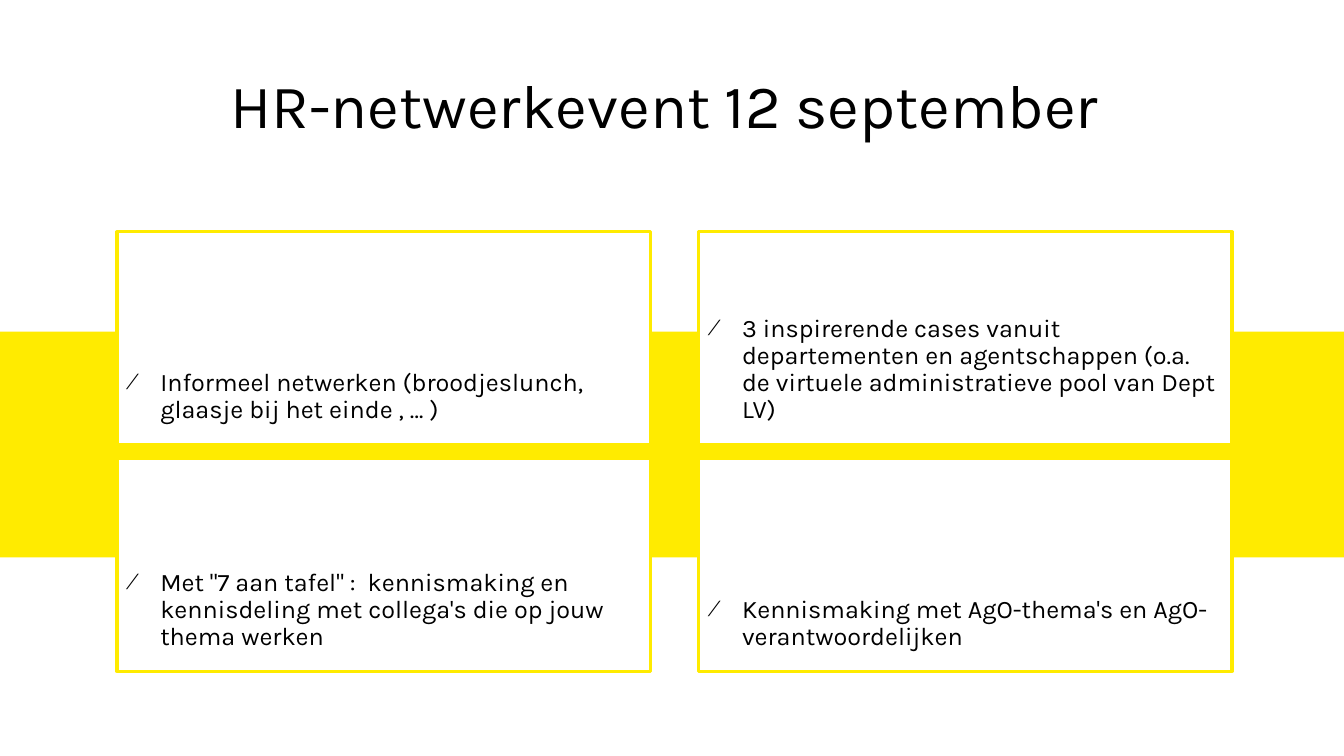
from lxml import etree
from pptx import Presentation
from pptx.dml.color import RGBColor
from pptx.enum.shapes import MSO_SHAPE
from pptx.enum.text import MSO_ANCHOR, MSO_AUTO_SIZE, PP_ALIGN
from pptx.oxml.ns import qn
from pptx.util import Inches, Pt

RECTANGLE = MSO_SHAPE.RECTANGLE
MIDDLE, BOTTOM = MSO_ANCHOR.MIDDLE, MSO_ANCHOR.BOTTOM
LEFT, CENTER = PP_ALIGN.LEFT, PP_ALIGN.CENTER
NO_AUTOFIT = MSO_AUTO_SIZE.NONE

COLORS = {"yellow": "FFEB00", "white": "FFFFFF", "black": "000000"}
FONT = "Karla"
COMPARISON_LAYOUT = 4

TITLE = "HR-netwerkevent 12 september "
TOPICS = [
    "Informeel netwerken (broodjeslunch, glaasje bij het einde , … ) ",
    "3 inspirerende cases vanuit departementen en agentschappen "
    "(o.a. de virtuele administratieve pool van Dept LV)",
    "Met \"7 aan tafel\" :  kennismaking en kennisdeling met collega's "
    "die op jouw thema werken",
    "Kennismaking met AgO-thema's en AgO-verantwoordelijken",
]
CARD_LEFT, CARD_TOP = 1.16, 2.3
CARD_WIDTH, CARD_HEIGHT = 5.29, 2.11
COLUMN_STEP, ROW_STEP = 5.77, 2.25


def color(name):
    return RGBColor.from_string(COLORS[name])


def place(shape, left, top, width, height):
    shape.left, shape.top = Inches(left), Inches(top)
    shape.width, shape.height = Inches(width), Inches(height)


def add_slash_bullet(paragraph):
    properties = paragraph._p.get_or_add_pPr()
    properties.set("marL", str(Inches(0.31)))
    properties.set("indent", str(Inches(-0.31)))
    etree.SubElement(properties, qn("a:buSzPct"), val="90000")
    etree.SubElement(properties, qn("a:buFont"), typeface=FONT)
    etree.SubElement(properties, qn("a:buChar"), char="⁄")


def write_text(shape, text, size, align=LEFT, anchor=MIDDLE, spacing=1.0,
               margins=(0, 0, 0, 0), bullet=False):
    """Fill a shape with one paragraph; margins are left, top, right, bottom."""
    frame = shape.text_frame
    frame.word_wrap = True
    frame.auto_size = NO_AUTOFIT
    frame.vertical_anchor = anchor
    (frame.margin_left, frame.margin_top,
     frame.margin_right, frame.margin_bottom) = map(Inches, margins)
    frame.text = text
    paragraph = frame.paragraphs[0]
    if bullet:
        add_slash_bullet(paragraph)
    paragraph.alignment = align
    paragraph.line_spacing = spacing
    paragraph.space_before = Pt(0)
    font = paragraph.runs[0].font
    font.name, font.size, font.bold = FONT, Pt(size), False
    font.color.rgb = color("black")


def add_band(slide):
    """Draw the yellow band across the slide, behind the placeholders."""
    band = slide.shapes.add_shape(
        RECTANGLE, 0, Inches(3.29), Inches(13.33), Inches(2.24))
    band.shadow.inherit = False
    band.fill.solid()
    band.fill.fore_color.rgb = color("yellow")
    band.line.fill.background()
    slide.shapes._spTree.insert(2, band._element)


def format_card(card, text, row, column):
    place(card, CARD_LEFT + column * COLUMN_STEP, CARD_TOP + row * ROW_STEP,
          CARD_WIDTH, CARD_HEIGHT)
    card.fill.solid()
    card.fill.fore_color.rgb = color("white")
    card.line.color.rgb = color("yellow")
    card.line.width = Pt(2.25)
    write_text(card, text, size=18, anchor=BOTTOM, spacing=0.9,
               margins=(0.12, 0, 0.12, 0.2), bullet=True)


def main():
    presentation = Presentation()
    presentation.slide_width = Inches(13.33)
    presentation.slide_height = Inches(7.5)
    layout = presentation.slide_layouts[COMPARISON_LAYOUT]
    slide = presentation.slides.add_slide(layout)

    title, *cards = slide.placeholders
    place(title, 0.41, 0.47, 12.52, 1.33)
    write_text(title, TITLE, size=44, align=CENTER, spacing=Pt(38))
    for index, (card, topic) in enumerate(zip(cards, TOPICS)):
        row, column = divmod(index, 2)
        format_card(card, topic, row, column)
    add_band(slide)

    presentation.save("out.pptx")


if __name__ == "__main__":
    main()
